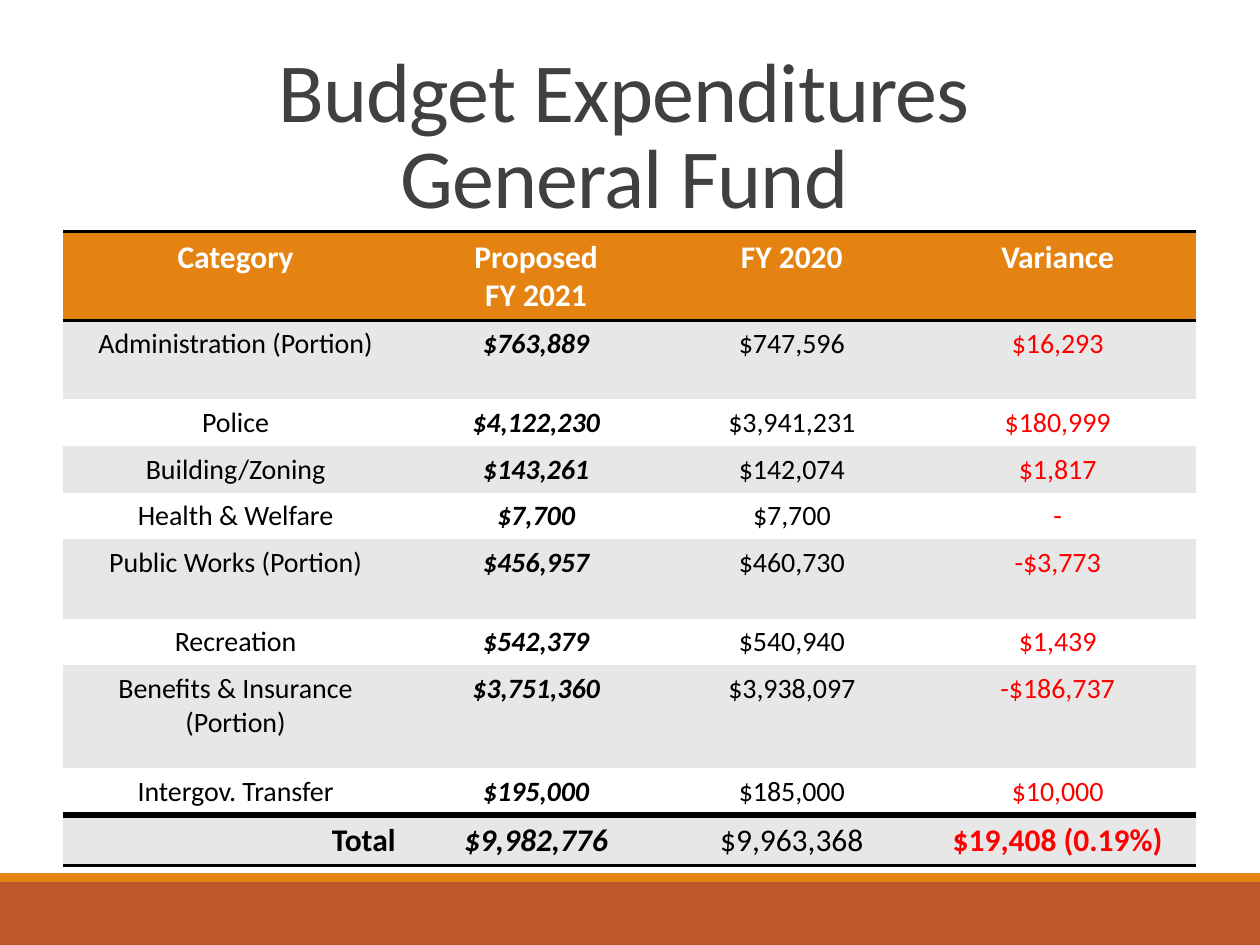
"""Build the general fund budget expenditures slide."""
import pptx
import pptx.dml.color
import pptx.enum.shapes
import pptx.enum.text
import pptx.oxml
import pptx.oxml.ns
import pptx.util

Inches = pptx.util.Inches
ALIGN = pptx.enum.text.PP_ALIGN


def rgb(color):
    return pptx.dml.color.RGBColor.from_string(color)


def write(tf, text, size=16, color="000000", bold=False, italic=False,
          align=ALIGN.CENTER, line_spacing=None, spc=0):
    tf.word_wrap = True
    tf.text = text
    for p in tf.paragraphs:
        p.alignment = align
        p.line_spacing = line_spacing
        for r in p.runs:
            r.font.name = "Calibri"
            r.font.size = pptx.util.Pt(size)
            r.font.bold = bold
            r.font.italic = italic
            r.font.color.rgb = rgb(color)
            if spc:
                r.font._element.set("spc", str(spc))


prs = pptx.Presentation()
prs.slide_width = Inches(10)
prs.slide_height = Inches(7.5)
s = prs.slides.add_slide(prs.slide_layouts[6])

for top, height, color in [(7, 0.5, "BD582C"), (6.93, 0.07, "E48312")]:
    sp = s.shapes.add_shape(pptx.enum.shapes.MSO_SHAPE.RECTANGLE,
                            0, Inches(top), Inches(10), Inches(height))
    sp.shadow.inherit = False
    sp.fill.solid()
    sp.fill.fore_color.rgb = rgb(color)
    sp.line.fill.background()

title = s.shapes.add_textbox(Inches(0.08), Inches(0.08), Inches(9.75), Inches(1.76))
title.text_frame.vertical_anchor = pptx.enum.text.MSO_ANCHOR.BOTTOM
write(title.text_frame, "Budget Expenditures\vGeneral Fund", size=48,
      color="404040", line_spacing=0.85, spc=-50)

rows = [
    (0.66, "Category", "Proposed\nFY 2021", "FY 2020", "Variance"),
    (0.63, "Administration (Portion)", "$763,889", "$747,596", "$16,293"),
    (0.37, "Police", "$4,122,230", "$3,941,231", "$180,999"),
    (0.37, "Building/Zoning", "$143,261", "$142,074", "$1,817"),
    (0.37, "Health & Welfare", "$7,700", "$7,700", "-"),
    (0.63, "Public Works (Portion)", "$456,957", "$460,730", "-$3,773"),
    (0.37, "Recreation", "$542,379", "$540,940", "$1,439"),
    (0.82, "Benefits & Insurance (Portion)", "$3,751,360", "$3,938,097", "-$186,737"),
    (0.37, "Intergov. Transfer", "$195,000", "$185,000", "$10,000"),
    (0.38, "Total", "$9,982,776", "$9,963,368", "$19,408 (0.19%)"),
]
widths = [2.74, 2.03, 2.03, 2.19]
last = len(rows) - 1
borders = {0: {"lnT": 2, "lnB": 2}, last: {"lnT": 4, "lnB": 2}}

frame = s.shapes.add_table(len(rows), len(widths), Inches(0.5), Inches(1.84),
                           Inches(9), Inches(5.06))
table = frame.table
style = table._tbl.tblPr.find(pptx.oxml.ns.qn("a:tableStyleId"))
style.text = "{2D5ABB26-0587-4C30-8999-92F81FD0307C}"
for column, width in zip(table.columns, widths):
    column.width = Inches(width)

for i, (height, *texts) in enumerate(rows):
    table.rows[i].height = Inches(height)
    header, total = i == 0, i == last
    fill = "E48312" if header else "E7E7E7" if i % 2 else "FFFFFF"
    for j, text in enumerate(texts):
        cell = table.cell(i, j)
        for side, points in borders.get(i, {}).items():
            cell._tc.get_or_add_tcPr().append(pptx.oxml.parse_xml(
                f'<a:{side} {pptx.oxml.ns.nsdecls("a")} w="{pptx.util.Pt(points)}">'
                f'<a:solidFill><a:srgbClr val="000000"/></a:solidFill></a:{side}>'))
        cell.fill.solid()
        cell.fill.fore_color.rgb = rgb(fill)
        write(cell.text_frame, text,
              size=18 if header or total else 16,
              color="FFFFFF" if header else "FF0000" if j == 3 else "000000",
              bold=header or j == 1 or (total and j != 2),
              italic=j == 1 and not header,
              align=ALIGN.RIGHT if total and j == 0 else ALIGN.CENTER)

prs.save("out.pptx")
